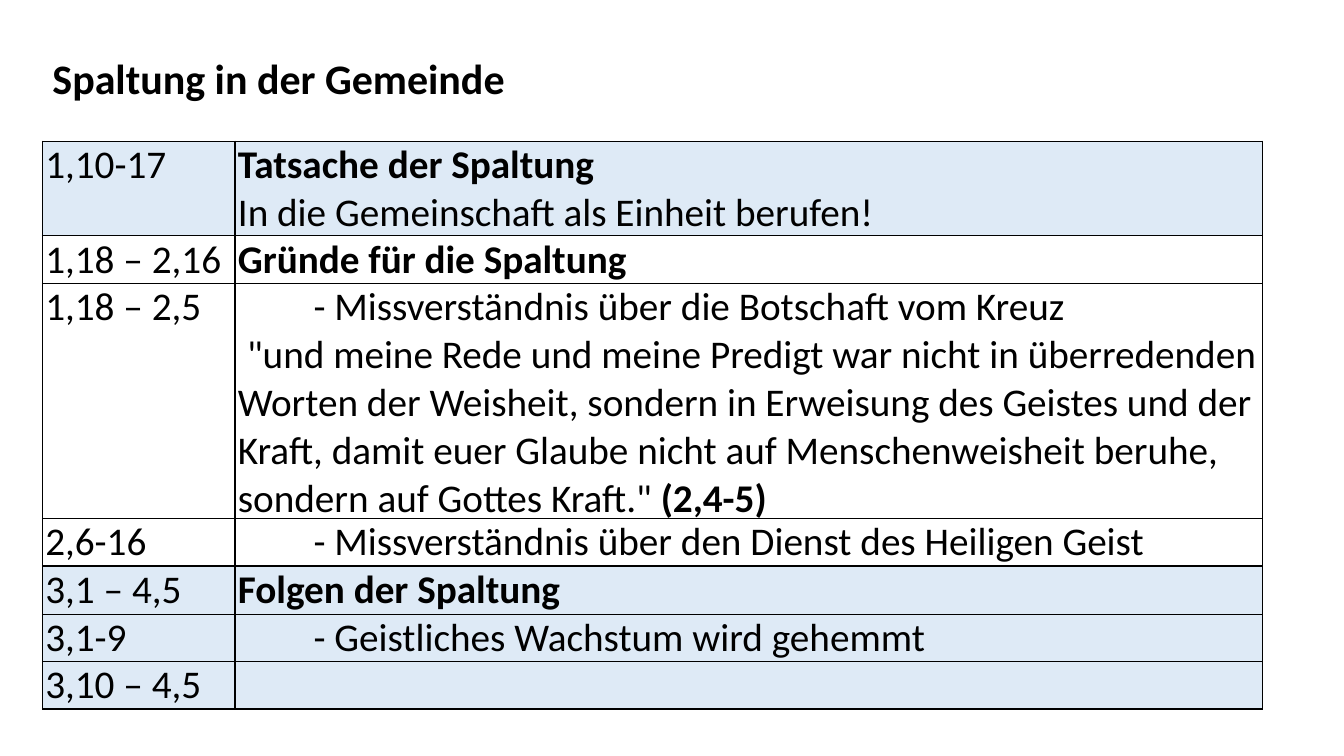
from pptx import Presentation
from pptx.dml.color import RGBColor
from pptx.enum.text import MSO_ANCHOR, MSO_AUTO_SIZE, PP_ALIGN
from pptx.oxml import parse_xml
from pptx.oxml.ns import nsdecls
from pptx.util import Inches, Pt

FONT = "Calibri"
BLACK, WHITE, PALE_BLUE = "000000", "FFFFFF", "DEEAF6"
COLUMN_WIDTHS = (1.91, 10.19)
POINT_INDENT = {"left": 0.75}
QUOTE = ('"und meine Rede und meine Predigt war nicht in überredenden Worten der '
         "Weisheit, sondern in Erweisung des Geistes und der Kraft, damit euer Glaube "
         'nicht auf Menschenweisheit beruhe, sondern auf Gottes Kraft." ')

# Each row: verses, height, fill, paragraphs as (runs of (text, bold), indents)
ROWS = [
    ("1,10-17", 0.94, PALE_BLUE, [
        ([("Tatsache der Spaltung", True)], {}),
        ([("In die Gemeinschaft als Einheit berufen!", False)], {})]),
    ("1,18 – 2,16", 0.47, WHITE, [([("Gründe für die Spaltung", True)], {})]),
    ("1,18 – 2,5", 2.33, WHITE, [
        ([("- Missverständnis über die Botschaft vom Kreuz", False)], POINT_INDENT),
        ([(QUOTE, False), ("(2,4-5)", True)], {"first": 0.09})]),
    ("2,6-16", 0.47, WHITE, [
        ([("- Missverständnis über den Dienst des Heiligen Geist", False)], POINT_INDENT)]),
    ("3,1 – 4,5", 0.48, PALE_BLUE, [([("Folgen der Spaltung", True)], {})]),
    ("3,1-9", 0.47, PALE_BLUE, [
        ([("- Geistliches Wachstum wird gehemmt", False)], POINT_INDENT)]),
    ("3,10 – 4,5", 0.47, PALE_BLUE, []),
]


def color(value):
    return RGBColor.from_string(value)


def add_text(paragraph, text, size=28, bold=False):
    run = paragraph.add_run()
    run.text = text
    font = run.font
    font.name, font.size, font.bold = FONT, Pt(size), bold
    font.color.rgb = color(BLACK)


def indent(paragraph, left=0, first=0):
    properties = paragraph._p.get_or_add_pPr()
    properties.set("marL", str(Inches(left)))
    properties.set("indent", str(Inches(first)))


def add_borders(cell):
    properties = cell._tc.get_or_add_tcPr()
    for position, side in enumerate(("lnL", "lnR", "lnT", "lnB")):
        properties.insert(position, parse_xml(
            f'<a:{side} {nsdecls("a")} w="{Pt(1)}"><a:solidFill>'
            f'<a:srgbClr val="{BLACK}"/></a:solidFill></a:{side}>'))


def fill_cell(cell, paragraphs, fill):
    cell.margin_left = cell.margin_right = Inches(0.03)
    cell.margin_top = cell.margin_bottom = 0
    cell.fill.solid()
    cell.fill.fore_color.rgb = color(fill)
    add_borders(cell)
    frame = cell.text_frame
    for number, (runs, indents) in enumerate(paragraphs):
        paragraph = frame.add_paragraph() if number else frame.paragraphs[0]
        indent(paragraph, **indents)
        for text, bold in runs:
            add_text(paragraph, text, bold=bold)
    if not paragraphs:
        frame.paragraphs[0].font.size = Pt(28)


def place_title(slide, left, top, width, height):
    title = slide.shapes.title
    title.left, title.top = Inches(left), Inches(top)
    title.width, title.height = Inches(width), Inches(height)
    frame = title.text_frame
    frame.word_wrap = True
    frame.auto_size = MSO_AUTO_SIZE.SHAPE_TO_FIT_TEXT
    frame.vertical_anchor = MSO_ANCHOR.TOP
    paragraph = frame.paragraphs[0]
    paragraph.alignment = PP_ALIGN.LEFT
    paragraph.line_spacing = 1.07
    add_text(paragraph, "Spaltung in der Gemeinde", size=30, bold=True)


def add_outline_table(slide, left, top, width, height):
    table = slide.shapes.add_table(len(ROWS), len(COLUMN_WIDTHS), Inches(left),
                                   Inches(top), Inches(width), Inches(height)).table
    table.first_row = table.horz_banding = False
    for column, column_width in zip(table.columns, COLUMN_WIDTHS):
        column.width = Inches(column_width)
    for row, (verses, row_height, fill, paragraphs) in zip(table.rows, ROWS):
        row.height = Inches(row_height)
        fill_cell(row.cells[0], [([(verses, False)], {})], fill)
        fill_cell(row.cells[1], paragraphs, fill)


def main():
    presentation = Presentation()
    presentation.slide_width, presentation.slide_height = Inches(13.33), Inches(7.5)
    slide = presentation.slides.add_slide(presentation.slide_layouts[5])
    place_title(slide, 0.42, 0.44, 6.67, 0.62)
    add_outline_table(slide, 0.42, 1.4, sum(COLUMN_WIDTHS), sum(row[1] for row in ROWS))
    presentation.save("out.pptx")


if __name__ == "__main__":
    main()
